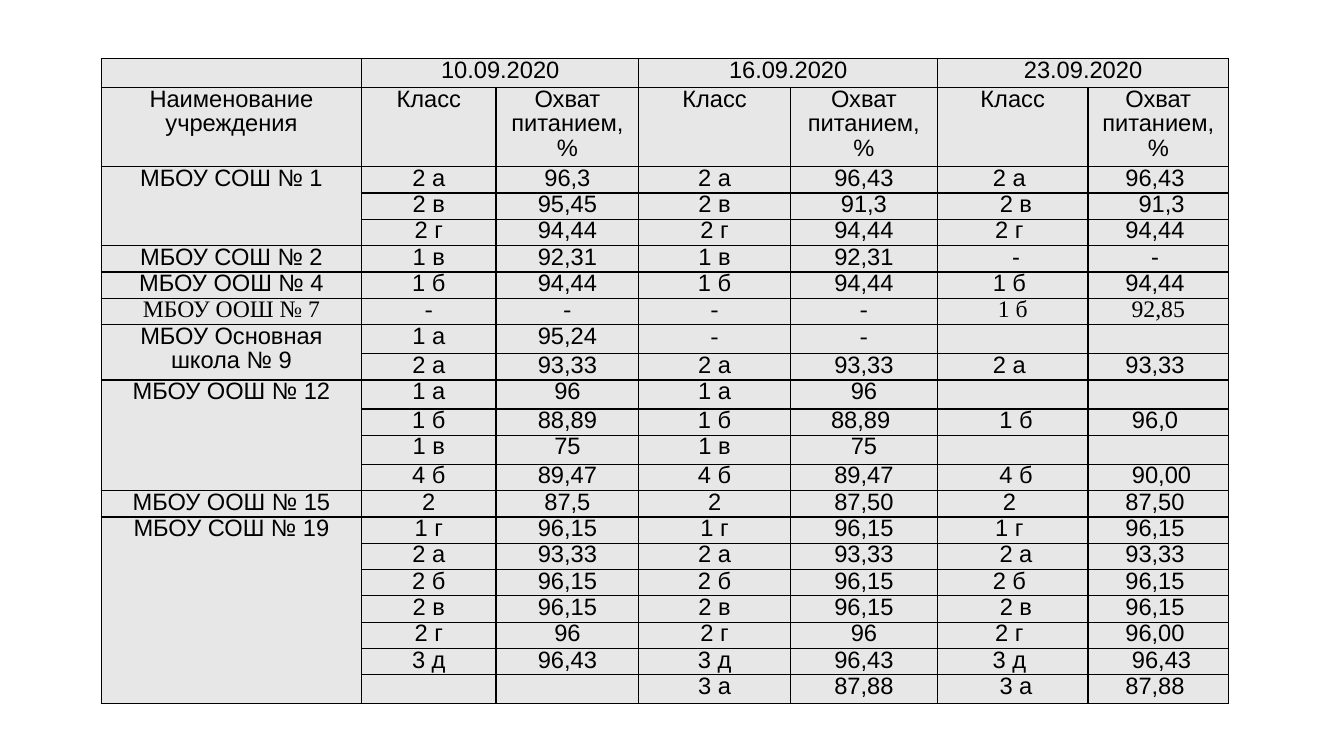
"""Build a slide with a table of school meal coverage on three dates."""
from lxml import etree
from pptx import Presentation
from pptx.dml.color import RGBColor
from pptx.enum.text import MSO_ANCHOR, PP_ALIGN
from pptx.oxml.ns import qn
from pptx.util import Inches, Pt

CENTER = PP_ALIGN.CENTER
TOP = MSO_ANCHOR.TOP
BLACK = RGBColor(0x00, 0x00, 0x00)
GREY = RGBColor(0xE7, 0xE7, 0xE7)
SANS = "Arial"
SERIF = "Times New Roman"
SIZE = Pt(16)
SIDES = ("a:lnL", "a:lnR", "a:lnT", "a:lnB")
WIDTHS = (2.44, 1.26, 1.34, 1.42, 1.38, 1.41, 1.32)
LINE = Inches(5.93) // 24
DATES = ("10.09.2020", "16.09.2020", "23.09.2020")
HEADS = ["Наименование учреждения"] + ["Класс", "Охват питанием, %"] * 3
SCHOOLS = [
    ("МБОУ СОШ № 1", [
        "2 а|96,3|2 а|96,43|2 а |96,43 ",
        "2 в|95,45|2 в|91,3| 2 в| 91,3",
        "2 г|94,44|2 г|94,44|2 г |94,44 "]),
    ("МБОУ СОШ № 2", ["1 в|92,31|1 в|92,31| -|- "]),
    ("МБОУ ООШ № 4", ["1 б|94,44|1 б|94,44|1 б |94,44 "]),
    ("МБОУ ООШ № 7", ["-|-|-|-|1 б|92,85"]),
    ("МБОУ Основная школа № 9", [
        "1 а|95,24|-|-||",
        "2 а|93,33|2 а|93,33|2 а |93,33 "]),
    ("МБОУ ООШ № 12", [
        "1 а|96|1 а|96||",
        "1 б|88,89|1 б|88,89 | 1 б|96,0 ",
        "1 в|75|1 в|75||",
        "4 б|89,47|4 б|89,47| 4 б| 90,00"]),
    ("МБОУ ООШ № 15", ["2|87,5|2|87,50|2 |87,50 "]),
    ("МБОУ СОШ № 19", [
        "1 г|96,15|1 г|96,15|1 г |96,15 ",
        "2 а|93,33|2 а|93,33| 2 а|93,33 ",
        "2 б|96,15|2 б|96,15|2 б |96,15 ",
        "2 в|96,15|2 в|96,15| 2 в|96,15 ",
        "2 г|96|2 г|96|2 г |96,00 ",
        "3 д|96,43|3 д|96,43|3 д | 96,43",
        "||3 а|87,88| 3 а|87,88 "]),
]


def add_grid(slide):
    """Add the empty table with its column widths and row heights."""
    count = 2 + sum(len(rows) for _, rows in SCHOOLS)
    frame = slide.shapes.add_table(
        count, len(WIDTHS), Inches(0.95), Inches(0.55),
        Inches(sum(WIDTHS)), LINE * (count + 2))
    table = frame.table
    table.first_row = False
    table.horz_banding = False
    for column, width in zip(table.columns, WIDTHS):
        column.width = Inches(width)
    for row in table.rows:
        row.height = LINE
    table.rows[1].height = LINE * 3
    return table


def style_cell(cell):
    """Give a cell its borders, fill, margins and text size."""
    props = cell._tc.get_or_add_tcPr()
    for side in SIDES:
        edge = etree.SubElement(props, qn(side), w=str(Pt(1)))
        fill = etree.SubElement(edge, qn("a:solidFill"))
        etree.SubElement(fill, qn("a:srgbClr"), val=str(BLACK))
    cell.fill.solid()
    cell.fill.fore_color.rgb = GREY
    cell.margin_left = cell.margin_right = Inches(0.04)
    cell.margin_top = cell.margin_bottom = 0
    cell.vertical_anchor = TOP
    para = cell.text_frame.paragraphs[0]
    para.alignment = CENTER
    para.line_spacing = 0.93
    etree.SubElement(para._p, qn("a:endParaRPr"), sz=str(int(SIZE.pt * 100)))


def write_cell(cell, text, face=SANS):
    """Write one run of text into a cell."""
    if not text:
        return
    run = cell.text_frame.paragraphs[0].add_run()
    run.text = text
    run.font.size = SIZE
    run.font.name = face
    run.font.color.rgb = BLACK


def fill_head(table):
    """Write the dates and the column headings."""
    for index, date in enumerate(DATES):
        left = 1 + 2 * index
        table.cell(0, left).merge(table.cell(0, left + 1))
        write_cell(table.cell(0, left), date)
    for col, head in enumerate(HEADS):
        write_cell(table.cell(1, col), head)


def fill_school(table, top, name, rows):
    """Write one school beside its classes and coverage values."""
    number = name.split()[-1]
    if len(rows) > 1:
        table.cell(top, 0).merge(table.cell(top + len(rows) - 1, 0))
    write_cell(table.cell(top, 0), name, SERIF if number == "7" else SANS)
    for row, line in enumerate(rows, top):
        for col, text in enumerate(line.split("|"), 1):
            serif = number == "7" or (number == "9" and text == "-")
            write_cell(table.cell(row, col), text, SERIF if serif else SANS)


def main():
    """Build and save the slide."""
    deck = Presentation()
    deck.slide_width = Inches(12.6)
    deck.slide_height = Inches(7.09)
    slide = deck.slides.add_slide(deck.slide_layouts[6])
    table = add_grid(slide)
    for cell in table.iter_cells():
        style_cell(cell)
    fill_head(table)
    top = 2
    for name, rows in SCHOOLS:
        fill_school(table, top, name, rows)
        top += len(rows)
    deck.save("out.pptx")


if __name__ == "__main__":
    main()
